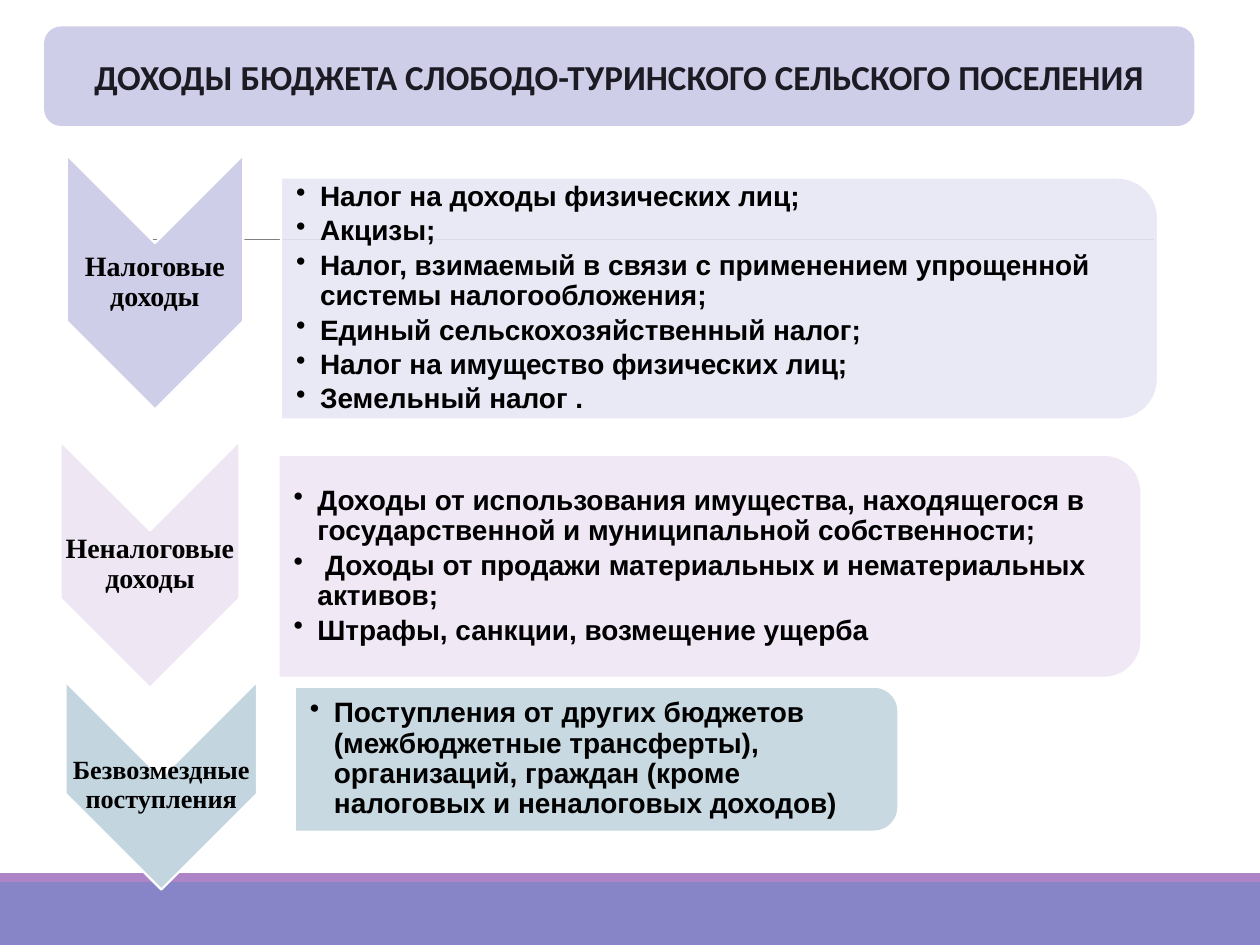
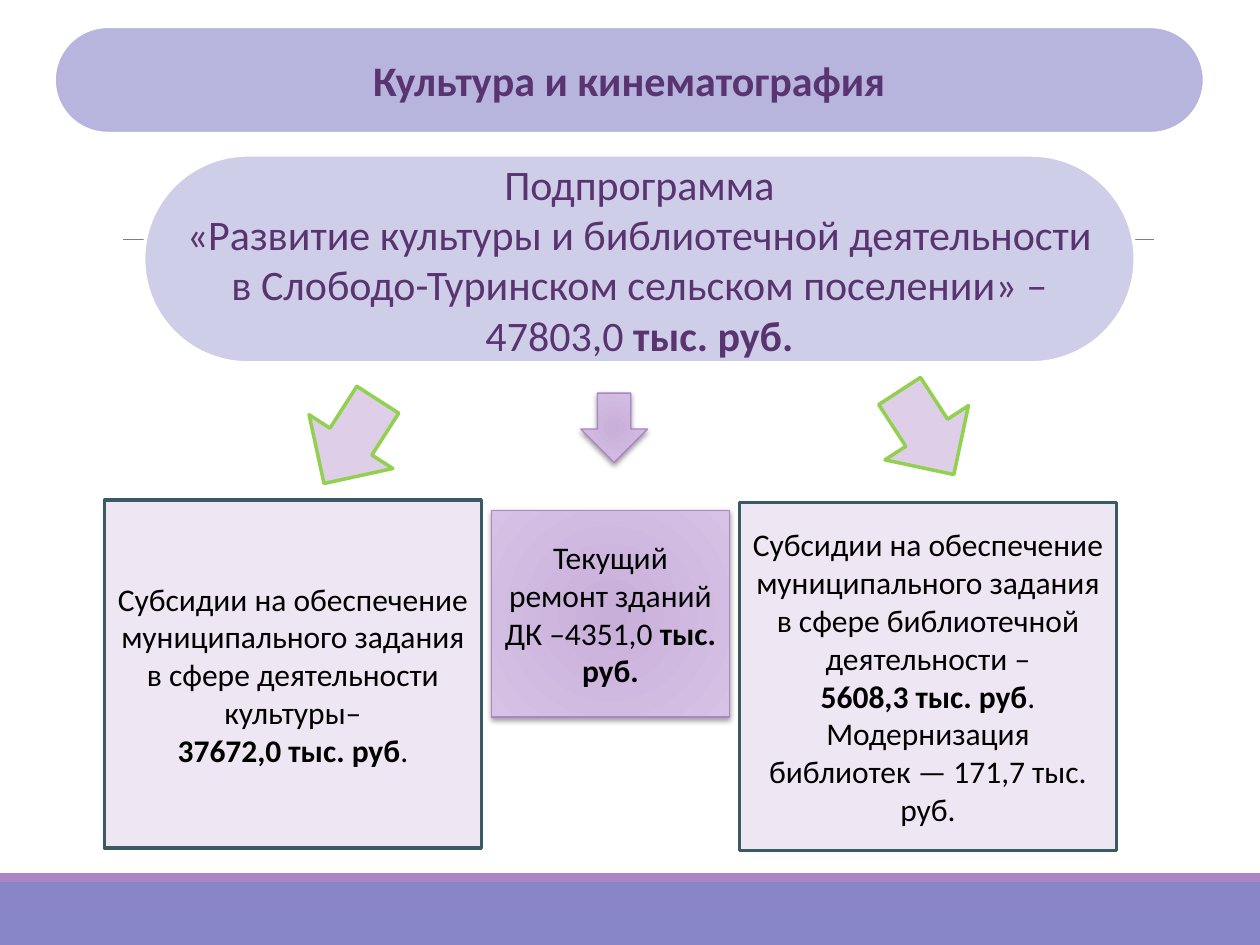
from dataclasses import dataclass

import pptx
import pptx.dml.color
import pptx.enum.shapes
import pptx.enum.text
import pptx.oxml
import pptx.oxml.ns
import pptx.util
from pptx.dml.color import RGBColor
from pptx.util import Inches, Pt

SHAPE = pptx.enum.shapes.MSO_SHAPE
ALIGN = pptx.enum.text.PP_ALIGN
qn = pptx.oxml.ns.qn

WHITE = RGBColor(0xFF, 0xFF, 0xFF)
BLACK = RGBColor(0x00, 0x00, 0x00)
GREY = RGBColor(0x80, 0x80, 0x80)
BAND = RGBColor(0x87, 0x84, 0xC7)
VIOLET = RGBColor(0xAD, 0x84, 0xC6)
LAVENDER = RGBColor(0xCF, 0xCE, 0xE9)
PALE_LAVENDER = RGBColor(0xE7, 0xE6, 0xF4)
DEEP_LAVENDER = RGBColor(0xB7, 0xB5, 0xDD)
PINK = RGBColor(0xEF, 0xE6, 0xF4)
BLUE_GREY = RGBColor(0xC3, 0xD5, 0xDF)
TITLE_INK = RGBColor(0x1C, 0x1B, 0x23)
PLUM = RGBColor(0x5A, 0x34, 0x71)
ARROW_FILL = RGBColor(0xDE, 0xCE, 0xE8)
GREEN = RGBColor(0x92, 0xD0, 0x50)
TEAL = RGBColor(0x3A, 0x5B, 0x63)
GLOW_CENTRE = RGBColor(0xC8, 0xAF, 0xD9)
GLOW_EDGE = RGBColor(0xD7, 0xC2, 0xE6)

TEXT_INSETS = (0.1, 0.05, 0.1, 0.05)
LABEL_INSETS = (0.01, 0.01, 0.01, 0.01)
LIST_INSETS = (0.12, 0.01, 0.01, 0.01)


@dataclass(frozen=True)
class Box:
    left: float
    top: float
    width: float
    height: float

    def turned(self) -> "Box":
        """Frame that fills this box after a quarter turn."""
        shift = (self.width - self.height) / 2
        return Box(self.left + shift, self.top - shift, self.height, self.width)

    def lengths(self) -> tuple:
        return tuple(Inches(v) for v in (self.left, self.top, self.width, self.height))


@dataclass(frozen=True)
class IncomeGroup:
    label: str
    label_size: int
    chevron: Box
    chevron_fill: RGBColor
    panel: Box
    panel_fill: RGBColor
    sources: list[str]


@dataclass(frozen=True)
class Expense:
    box: Box
    paragraphs: list[str]
    arrow: Box
    rotation: float = 0
    glowing: bool = False


INCOME_GROUPS = [
    IncomeGroup(
        "Налоговые доходы", 16, Box(0.53, 1.23, 1.4, 2.02), LAVENDER,
        Box(2.23, 1.41, 6.96, 1.92), PALE_LAVENDER,
        ["Налог на доходы физических лиц;",
         "Акцизы;",
         "Налог, взимаемый в связи с применением упрощенной системы налогообложения;",
         "Единый сельскохозяйственный налог;",
         "Налог на имущество физических лиц;",
         "Земельный налог ."]),
    IncomeGroup(
        "Неналоговые доходы", 16, Box(0.48, 3.5, 1.42, 1.96), PINK,
        Box(2.21, 3.61, 6.85, 1.77), PINK,
        ["Доходы от использования имущества, находящегося в государственной "
         "и муниципальной собственности;",
         " Доходы от продажи материальных и нематериальных активов;",
         "Штрафы, санкции, возмещение ущерба"]),
    IncomeGroup(
        "Безвозмездные поступления", 15, Box(0.52, 5.41, 1.52, 1.65), BLUE_GREY,
        Box(2.34, 5.45, 4.79, 1.15), BLUE_GREY,
        ["Поступления от других бюджетов (межбюджетные трансферты), организаций, "
         "граждан (кроме налоговых и неналоговых доходов)"]),
]

# Asterisks enclose bold words.
EXPENSES = [
    Expense(
        Box(0.83, 3.97, 2.99, 2.76),
        ["Субсидии на обеспечение муниципального задания в сфере деятельности культуры–",
         "*37672,0 тыс. руб*."],
        Box(2.39, 3.11, 0.79, 0.79), rotation=32.7),
    Expense(
        Box(5.87, 3.99, 2.99, 2.76),
        ["Субсидии на обеспечение муниципального задания в сфере библиотечной деятельности –",
         "*5608,3 тыс. руб*.",
         "Модернизация библиотек — 171,7 тыс. руб."],
        Box(6.96, 3.04, 0.79, 0.79), rotation=327),
    Expense(
        Box(3.9, 4.05, 1.89, 1.64),
        ["Текущий ремонт зданий ДК –4351,0* тыс. руб.*"],
        Box(4.61, 3.12, 0.53, 0.55), glowing=True),
]


def write_text(shape, paragraphs: list[str], *, size: float, font: str = "Calibri",
               color: RGBColor = BLACK, bold: bool = False, align=ALIGN.CENTER,
               insets: tuple = TEXT_INSETS, line_spacing: float = 1.0,
               space_after: float = 0, bullet: bool = False) -> None:
    """Fill a shape with paragraphs; words between asterisks become bold."""
    frame = shape.text_frame
    frame.word_wrap = True
    frame.vertical_anchor = pptx.enum.text.MSO_ANCHOR.MIDDLE
    (frame.margin_left, frame.margin_top,
     frame.margin_right, frame.margin_bottom) = map(Inches, insets)
    for index, text in enumerate(paragraphs):
        paragraph = frame.add_paragraph() if index else frame.paragraphs[0]
        paragraph.alignment = align
        paragraph.line_spacing = line_spacing
        paragraph.space_after = Pt(space_after)
        if bullet:
            properties = paragraph._p.get_or_add_pPr()
            properties.set("marL", str(Inches(0.19)))
            properties.set("indent", str(-Inches(0.19)))
            properties.append(pptx.oxml.parse_xml(
                f'<a:buChar {pptx.oxml.ns.nsdecls("a")} char="•"/>'))
        for part, words in enumerate(text.split("*")):
            if words:
                run = paragraph.add_run()
                run.text = words
                run.font.name = font
                run.font.size = Pt(size)
                run.font.bold = bold or part % 2 == 1
                run.font.color.rgb = color


def add_block(slide, kind, box: Box, fill: RGBColor, *, line: RGBColor | None = None,
              line_width: float = 1.25, rotation: float = 0,
              rounding: float | None = None):
    block = slide.shapes.add_shape(kind, *box.lengths())
    block.shadow.inherit = False
    block.rotation = rotation
    block.fill.solid()
    block.fill.fore_color.rgb = fill
    if line is None:
        block.line.fill.background()
    else:
        block.line.color.rgb = line
        block.line.width = Pt(line_width)
    if rounding is not None:
        block.adjustments[0] = rounding
    return block


def make_translucent(block, percent: int) -> None:
    tint = block.element.spPr.find(qn("a:solidFill"))[0]
    tint.append(pptx.oxml.parse_xml(
        f'<a:alpha {pptx.oxml.ns.nsdecls("a")} val="{percent * 1000}"/>'))


def make_glowing(block) -> None:
    """Give a block a radial gradient and a soft shadow below."""
    namespace = pptx.oxml.ns.nsdecls("a")
    block.fill.gradient()
    for stop, color, position in zip(block.fill.gradient_stops,
                                     (GLOW_CENTRE, GLOW_EDGE), (0, 1)):
        stop.color.rgb = color
        stop.position = position
    properties = block.element.spPr
    gradient = properties.find(qn("a:gradFill"))
    gradient.replace(gradient.find(qn("a:lin")), pptx.oxml.parse_xml(
        f'<a:path {namespace} path="circle">'
        '<a:fillToRect l="50000" t="50000" r="50000" b="50000"/></a:path>'))
    properties.find(qn("a:effectLst")).append(pptx.oxml.parse_xml(
        f'<a:outerShdw {namespace} blurRad="{Pt(3.1)}" dist="{Pt(1.6)}" dir="5400000" '
        'rotWithShape="0"><a:srgbClr val="000000"><a:alpha val="38000"/></a:srgbClr>'
        '</a:outerShdw>'))


def add_base_slide(deck):
    """Blank slide with the shared rule and bottom bands."""
    slide = deck.slides.add_slide(deck.slide_layouts[6])
    rule = slide.shapes.add_connector(
        pptx.enum.shapes.MSO_CONNECTOR.STRAIGHT,
        Inches(0.98), Inches(1.9), Inches(9.16), Inches(1.9))
    rule.line.color.rgb = GREY
    rule.line.width = Pt(0.5)
    rule.element.spPr.append(pptx.oxml.parse_xml(
        f'<a:effectLst {pptx.oxml.ns.nsdecls("a")}/>'))
    add_block(slide, SHAPE.RECTANGLE, Box(0, 7, 10, 0.5), BAND)
    add_block(slide, SHAPE.RECTANGLE, Box(0, 6.93, 10, 0.07), VIOLET)
    return slide


def add_income_group(slide, group: IncomeGroup) -> None:
    chevron, panel = group.chevron, group.panel
    add_block(slide, SHAPE.CHEVRON, chevron.turned(), group.chevron_fill,
              line=WHITE, rotation=90)
    label_box = Box(chevron.left, chevron.top + chevron.width / 2,
                    chevron.width, chevron.height - chevron.width)
    label = slide.shapes.add_textbox(*label_box.lengths())
    write_text(label, [group.label], size=group.label_size, font="Times New Roman",
               bold=True, insets=LABEL_INSETS, line_spacing=0.9)

    backing = add_block(slide, SHAPE.ROUND_2_SAME_RECTANGLE, panel.turned(),
                        group.panel_fill, line=WHITE, rotation=90)
    make_translucent(backing, 90)
    corner = panel.height * 0.05
    list_box = Box(panel.left, panel.top + corner,
                   panel.width - corner, panel.height - 2 * corner)
    sources = slide.shapes.add_textbox(*list_box.lengths())
    write_text(sources, group.sources, size=16, font="Arial", bold=True,
               align=ALIGN.LEFT, insets=LIST_INSETS, line_spacing=0.9,
               space_after=2.4, bullet=True)


def add_expense(slide, expense: Expense) -> None:
    if expense.glowing:
        arrow_line, box_line, width = VIOLET, VIOLET, 0.75
    else:
        arrow_line, box_line, width = GREEN, TEAL, 2
    arrow = add_block(slide, SHAPE.DOWN_ARROW, expense.arrow, ARROW_FILL,
                      line=arrow_line, line_width=width, rotation=expense.rotation)
    box = add_block(slide, SHAPE.RECTANGLE, expense.box, PINK,
                    line=box_line, line_width=width)
    if expense.glowing:
        make_glowing(arrow)
        make_glowing(box)
    write_text(box, expense.paragraphs, size=18)


def build_income_slide(deck) -> None:
    slide = add_base_slide(deck)
    for group in INCOME_GROUPS:
        add_income_group(slide, group)
    title = add_block(slide, SHAPE.ROUNDED_RECTANGLE, Box(0.35, 0.21, 9.13, 0.79),
                      LAVENDER, rounding=0.17)
    write_text(title, ["ДОХОДЫ БЮДЖЕТА СЛОБОДО-ТУРИНСКОГО СЕЛЬСКОГО ПОСЕЛЕНИЯ"],
               size=20, color=TITLE_INK, bold=True)


def build_culture_slide(deck) -> None:
    slide = add_base_slide(deck)
    title = add_block(slide, SHAPE.ROUNDED_RECTANGLE, Box(0.43, 0.21, 9.13, 0.85),
                      DEEP_LAVENDER, line=WHITE, line_width=2, rounding=0.5)
    write_text(title, ["Культура и кинематография"], size=24, color=PLUM, bold=True)
    subprogram = add_block(slide, SHAPE.ROUNDED_RECTANGLE, Box(1.14, 1.23, 7.87, 1.65),
                           LAVENDER, line=WHITE, line_width=2, rounding=0.5)
    write_text(subprogram,
               ["Подпрограмма",
                "«Развитие культуры и библиотечной деятельности в Слободо-Туринском "
                "сельском поселении» – 47803,0* тыс. руб.*"],
               size=24, color=PLUM)
    for expense in EXPENSES:
        add_expense(slide, expense)


def main() -> None:
    deck = pptx.Presentation()
    deck.slide_width, deck.slide_height = Inches(10), Inches(7.5)
    build_income_slide(deck)
    build_culture_slide(deck)
    deck.save("out.pptx")


if __name__ == "__main__":
    main()
